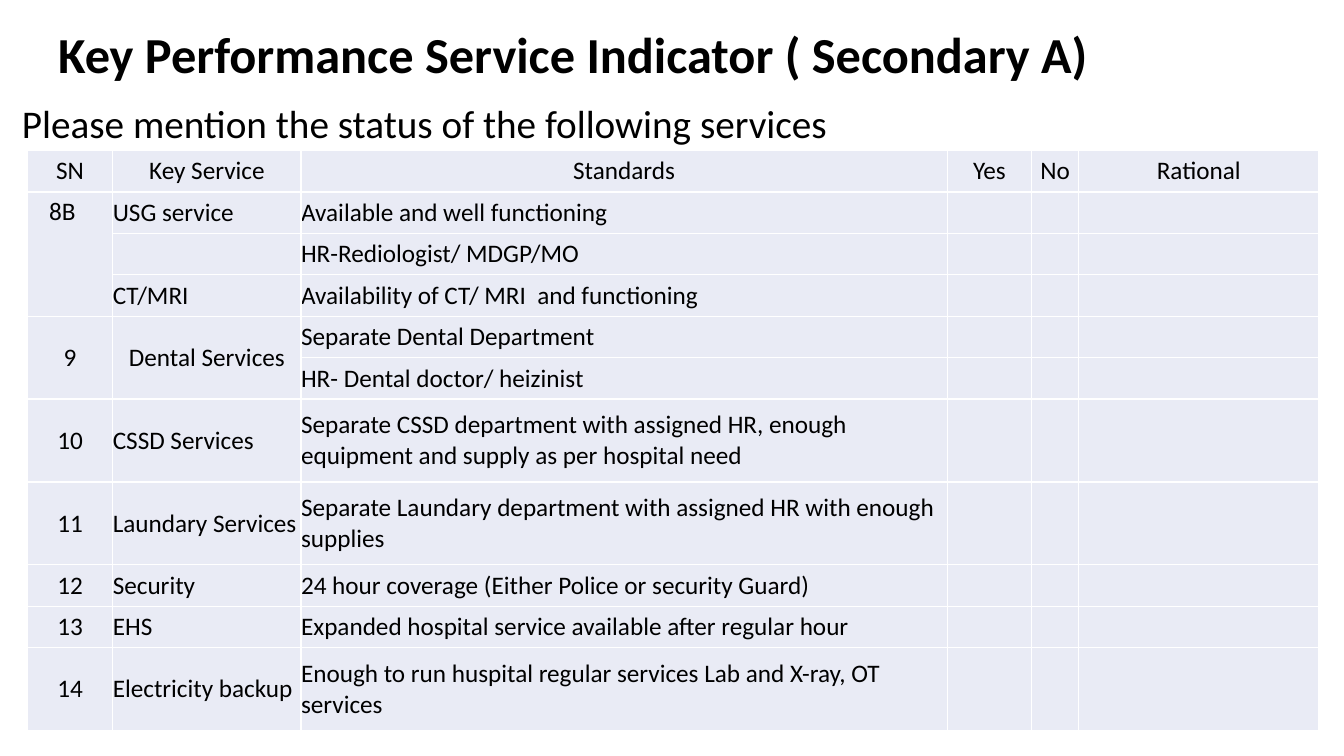
from dataclasses import dataclass

from lxml import etree
from pptx import Presentation
from pptx.dml.color import RGBColor
from pptx.enum.text import MSO_ANCHOR, PP_ALIGN
from pptx.oxml.ns import qn
from pptx.slide import Slide
from pptx.table import Table, _Cell
from pptx.text.text import _Paragraph
from pptx.util import Pt

TOP = MSO_ANCHOR.TOP
MIDDLE = MSO_ANCHOR.MIDDLE
LEFT = PP_ALIGN.LEFT
CENTER = PP_ALIGN.CENTER

BLACK = RGBColor(0x00, 0x00, 0x00)
WHITE = RGBColor(0xFF, 0xFF, 0xFF)
PALE_BLUE = RGBColor(0xE9, 0xEB, 0xF5)
FONT = "Calibri"
TABLE_SIZE = 18
LINE_HEIGHT = 29.62
COLUMN_WIDTHS = (61, 134.5, 461.5, 60.5, 33.5, 171.5)
HEADERS = ("SN", "Key Service", "Standards", "Yes", "No", "Rational")


@dataclass(frozen=True)
class Heading:
    text: str
    left: float
    top: float
    width: float
    height: float
    size: float
    bold: bool
    anchor: MSO_ANCHOR


@dataclass(frozen=True)
class ServiceRow:
    number: str
    service: str
    standard: str
    lines: int = 1


@dataclass(frozen=True)
class Merge:
    column: int
    first_row: int
    last_row: int


HEADINGS = (
    Heading("Key Performance Service Indicator ( Secondary A)",
            34.5, 17.3, 860, 47.5, 36, True, MIDDLE),
    Heading("Please mention the status of the following services",
            8.6, 71.3, 900.7, 414.7, 28, False, TOP),
)
SERVICES = (
    ServiceRow("8B", "USG service", "Available and well functioning"),
    ServiceRow("", "", "HR-Rediologist/ MDGP/MO"),
    ServiceRow("", "CT/MRI", "Availability of CT/ MRI  and functioning"),
    ServiceRow("9", "Dental Services", "Separate Dental Department"),
    ServiceRow("", "", "HR- Dental doctor/ heizinist"),
    ServiceRow("10", "CSSD Services",
               "Separate CSSD department with assigned HR, enough equipment "
               "and supply as per hospital need", 2),
    ServiceRow("11", "Laundary Services",
               "Separate Laundary department with assigned HR with enough supplies", 2),
    ServiceRow("12", "Security", "24 hour coverage (Either Police or security Guard)"),
    ServiceRow("13", "EHS", "Expanded hospital service available after regular hour"),
    ServiceRow("14", "Electricity backup",
               "Enough to run huspital regular services Lab and X-ray, OT services", 2),
)
MERGES = (Merge(0, 1, 3), Merge(0, 4, 5), Merge(1, 4, 5))


def format_text(paragraph: _Paragraph, size: float, bold: bool = False) -> None:
    for font in (paragraph.font, *(run.font for run in paragraph.runs)):
        font.name = FONT
        font.size = Pt(size)
        font.bold = bold
        font.color.rgb = BLACK


def add_heading(slide: Slide, heading: Heading) -> None:
    shape = slide.shapes.add_textbox(
        Pt(heading.left), Pt(heading.top), Pt(heading.width), Pt(heading.height))
    text_frame = shape.text_frame
    text_frame.word_wrap = True
    text_frame.vertical_anchor = heading.anchor
    text_frame.text = heading.text
    paragraph = text_frame.paragraphs[0]
    paragraph.line_spacing = 0.9
    format_text(paragraph, heading.size, heading.bold)


def set_borders(cell: _Cell) -> None:
    properties = cell._tc.get_or_add_tcPr()
    for position, side in enumerate(("a:lnL", "a:lnR", "a:lnT", "a:lnB")):
        line = etree.Element(qn(side), w=str(Pt(1)))
        fill = etree.SubElement(line, qn("a:solidFill"))
        etree.SubElement(fill, qn("a:srgbClr"), val=str(WHITE))
        properties.insert(position, line)


def fill_cell(cell: _Cell, text: str, alignment: PP_ALIGN) -> None:
    cell.margin_left = cell.margin_right = cell.margin_top = cell.margin_bottom = 0
    cell.vertical_anchor = MIDDLE
    cell.fill.solid()
    cell.fill.fore_color.rgb = PALE_BLUE
    set_borders(cell)
    cell.text_frame.text = text
    paragraph = cell.text_frame.paragraphs[0]
    paragraph.alignment = alignment
    format_text(paragraph, TABLE_SIZE)


def add_service_table(slide: Slide) -> Table:
    heights = [LINE_HEIGHT] + [LINE_HEIGHT * row.lines for row in SERVICES]
    table = slide.shapes.add_table(
        len(heights), len(COLUMN_WIDTHS), Pt(19.6), Pt(107.5),
        Pt(sum(COLUMN_WIDTHS)), Pt(sum(heights))).table
    table.first_row = False
    table.horz_banding = False
    for column, width in zip(table.columns, COLUMN_WIDTHS):
        column.width = Pt(width)
    for row, height in zip(table.rows, heights):
        row.height = Pt(height)

    contents = [HEADERS] + [
        (row.number, row.service, row.standard, "", "", "") for row in SERVICES]
    for row_index, texts in enumerate(contents):
        for column_index, text in enumerate(texts):
            centered = row_index == 0 or column_index == 0
            fill_cell(table.cell(row_index, column_index), text,
                      CENTER if centered else LEFT)
    for merge in MERGES:
        table.cell(merge.first_row, merge.column).merge(
            table.cell(merge.last_row, merge.column))
    return table


def main() -> None:
    presentation = Presentation()
    presentation.slide_width = Pt(960)
    presentation.slide_height = Pt(540)
    slide = presentation.slides.add_slide(presentation.slide_layouts[6])
    for heading in HEADINGS:
        add_heading(slide, heading)
    table = add_service_table(slide)

    ultrasound_number = table.cell(1, 0)
    ultrasound_number.vertical_anchor = TOP
    ultrasound_number.margin_left = Pt(15.5)
    ultrasound_number.margin_top = Pt(3.6)
    ultrasound_number.text_frame.paragraphs[0].alignment = LEFT
    table.cell(4, 1).text_frame.paragraphs[0].alignment = CENTER
    presentation.save("out.pptx")


if __name__ == "__main__":
    main()
